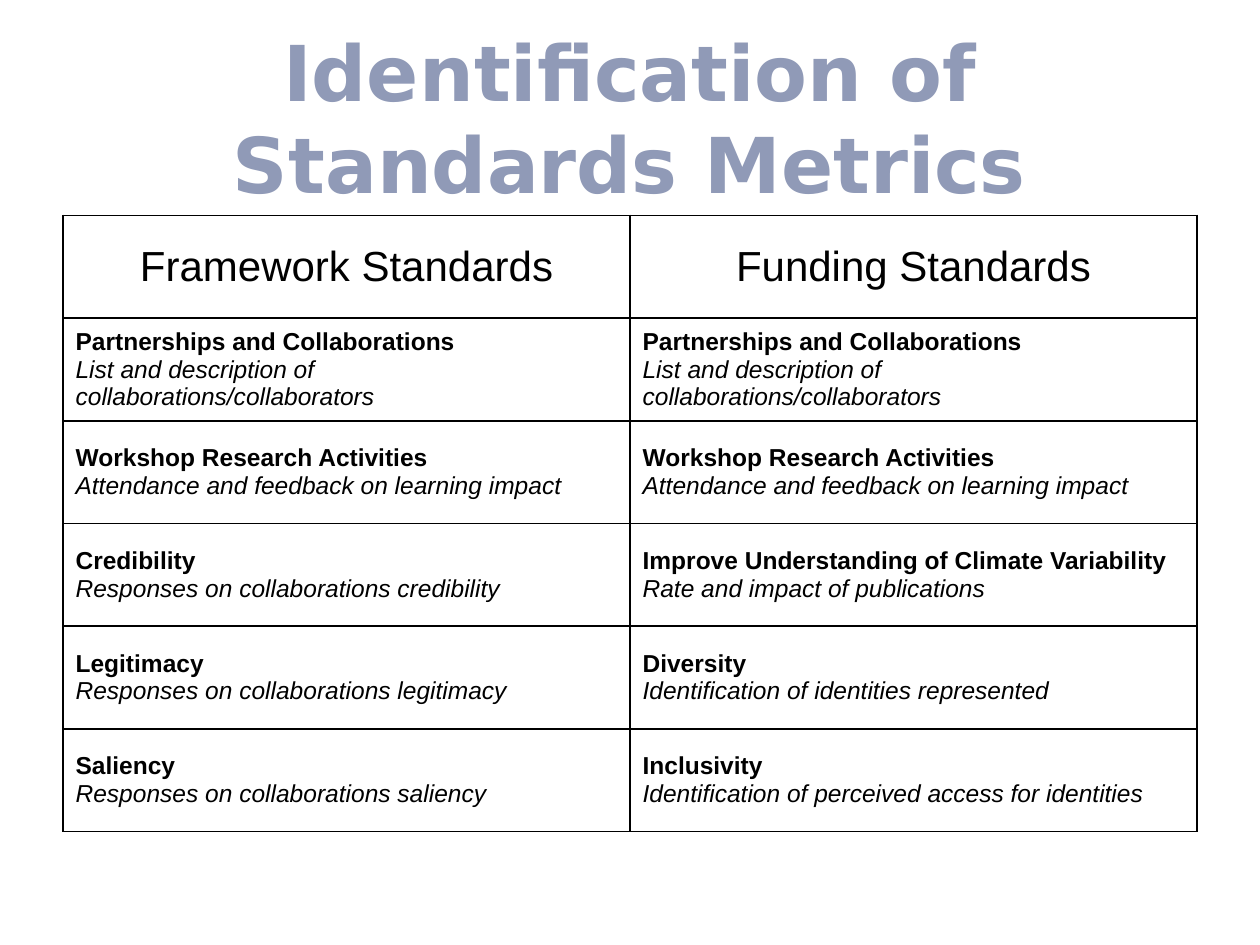
from lxml.etree import SubElement
from pptx import Presentation
from pptx.dml.color import RGBColor
from pptx.enum.text import MSO_ANCHOR as Anchor, PP_ALIGN as Align
from pptx.oxml.ns import qn
from pptx.util import Inches, Pt

# Content
TITLE = "Identification of Standards Metrics"
HEADINGS = ("Framework Standards", "Funding Standards")
PARTNERSHIPS = ("Partnerships and Collaborations",
                "List and description of collaborations/collaborators")
WORKSHOPS = ("Workshop Research Activities",
             "Attendance and feedback on learning impact")
METRICS = [
    (PARTNERSHIPS, PARTNERSHIPS),
    (WORKSHOPS, WORKSHOPS),
    (("Credibility", "Responses on collaborations credibility"),
     ("Improve Understanding of Climate Variability",
      "Rate and impact of publications")),
    (("Legitimacy", "Responses on collaborations legitimacy"),
     ("Diversity", "Identification of identities represented")),
    (("Saliency", "Responses on collaborations saliency"),
     ("Inclusivity", "Identification of perceived access for identities")),
]

# Formats
BLACK, WHITE, SLATE = "000000", "FFFFFF", "909AB7"
TITLE_FORMAT = dict(name="DejaVu Sans", size=Pt(44), bold=True)
HEADING_FORMAT = dict(name="Arial", size=Pt(24), bold=False)
METRIC_FORMAT = dict(name="Arial", size=Pt(14), bold=True, italic=False)
MEASURE_FORMAT = dict(name="Arial", size=Pt(14), bold=False, italic=True)

# Layout
WIDTH, HEIGHT = Inches(10), Inches(7.5)
MARGIN = int(WIDTH * 0.05)
CONTENT_WIDTH = WIDTH - 2 * MARGIN
TABLE_TOP, TABLE_HEIGHT = Inches(1.71), Inches(4.89)


def color(value):
    return RGBColor.from_string(value)


def write(para, text, format_values, ink, align):
    para.alignment = align
    span = para.add_run()
    span.text = text
    for name, value in format_values.items():
        setattr(span.font, name, value)
    span.font.color.rgb = color(ink)


def add_borders(cell):
    properties = cell._tc.get_or_add_tcPr()
    for position, side in enumerate(("lnL", "lnR", "lnT", "lnB")):
        line = SubElement(properties, qn(f"a:{side}"), w=str(Pt(1)))
        fill = SubElement(line, qn("a:solidFill"))
        SubElement(fill, qn("a:srgbClr"), val=BLACK)
        properties.insert(position, line)


def fill_cell(cell, lines, align):
    cell.vertical_anchor = Anchor.MIDDLE
    cell.fill.solid()
    cell.fill.fore_color.rgb = color(WHITE)
    add_borders(cell)
    frame = cell.text_frame
    for index, (text, format_values) in enumerate(lines):
        para = frame.add_paragraph() if index else frame.paragraphs[0]
        write(para, text, format_values, BLACK, align)


def add_title(page):
    box = page.shapes.title
    box.left, box.top = MARGIN, int(HEIGHT * 0.04)
    box.width, box.height = CONTENT_WIDTH, Inches(1.25)
    frame = box.text_frame
    frame.word_wrap = True
    frame.vertical_anchor = Anchor.MIDDLE
    for side in ("left", "right", "top", "bottom"):
        setattr(frame, f"margin_{side}", Inches(0.1))
    write(frame.paragraphs[0], TITLE, TITLE_FORMAT, SLATE, Align.CENTER)


def add_metrics_table(page):
    row_count, column_count = len(METRICS) + 1, len(HEADINGS)
    table = page.shapes.add_table(row_count, column_count, MARGIN, TABLE_TOP,
                                  CONTENT_WIDTH, TABLE_HEIGHT).table
    table.first_row = table.horz_banding = False
    for row in table.rows:
        row.height = TABLE_HEIGHT // row_count
    for column, heading in enumerate(HEADINGS):
        fill_cell(table.cell(0, column), [(heading, HEADING_FORMAT)], Align.CENTER)
    for row, entries in enumerate(METRICS, start=1):
        for column, (metric, measure) in enumerate(entries):
            lines = [(metric, METRIC_FORMAT), (measure, MEASURE_FORMAT)]
            fill_cell(table.cell(row, column), lines, Align.LEFT)


def main():
    deck = Presentation()
    deck.slide_width, deck.slide_height = WIDTH, HEIGHT
    page = deck.slides.add_slide(deck.slide_layouts[5])
    add_title(page)
    add_metrics_table(page)
    deck.save("out.pptx")


if __name__ == "__main__":
    main()
